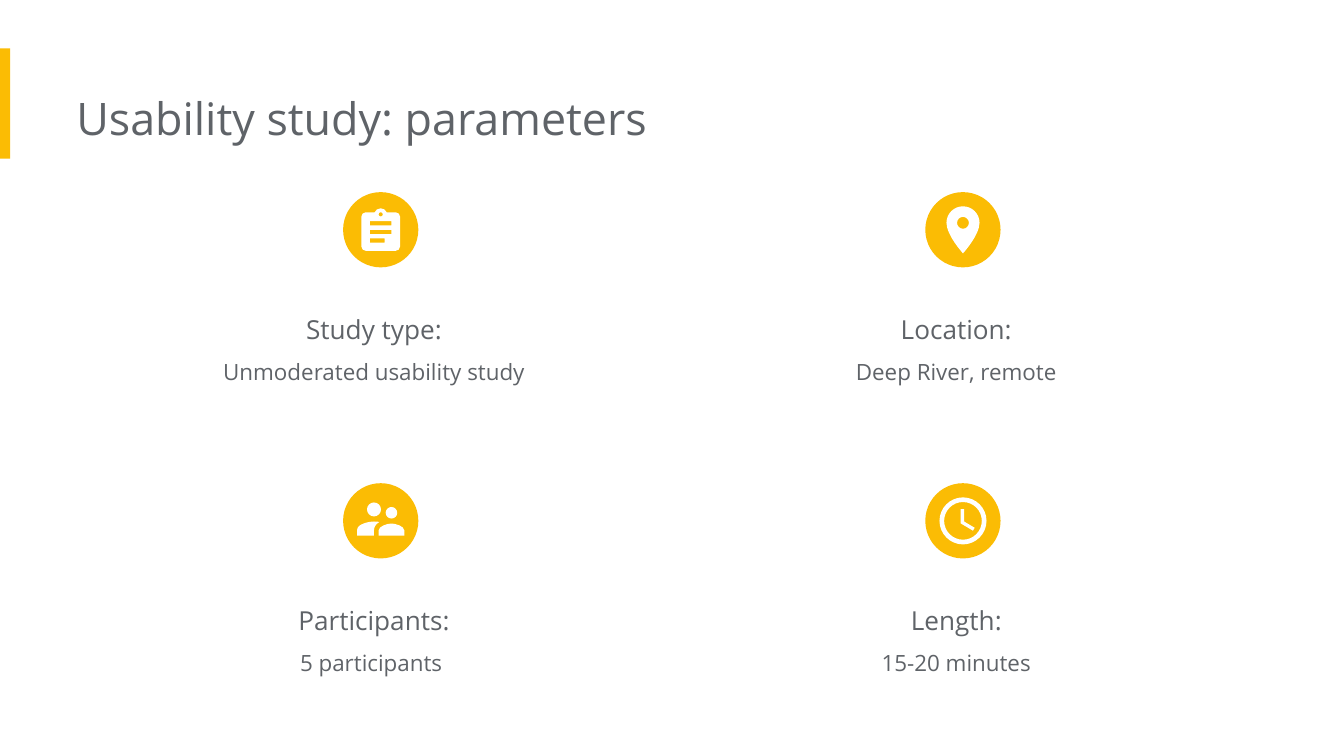
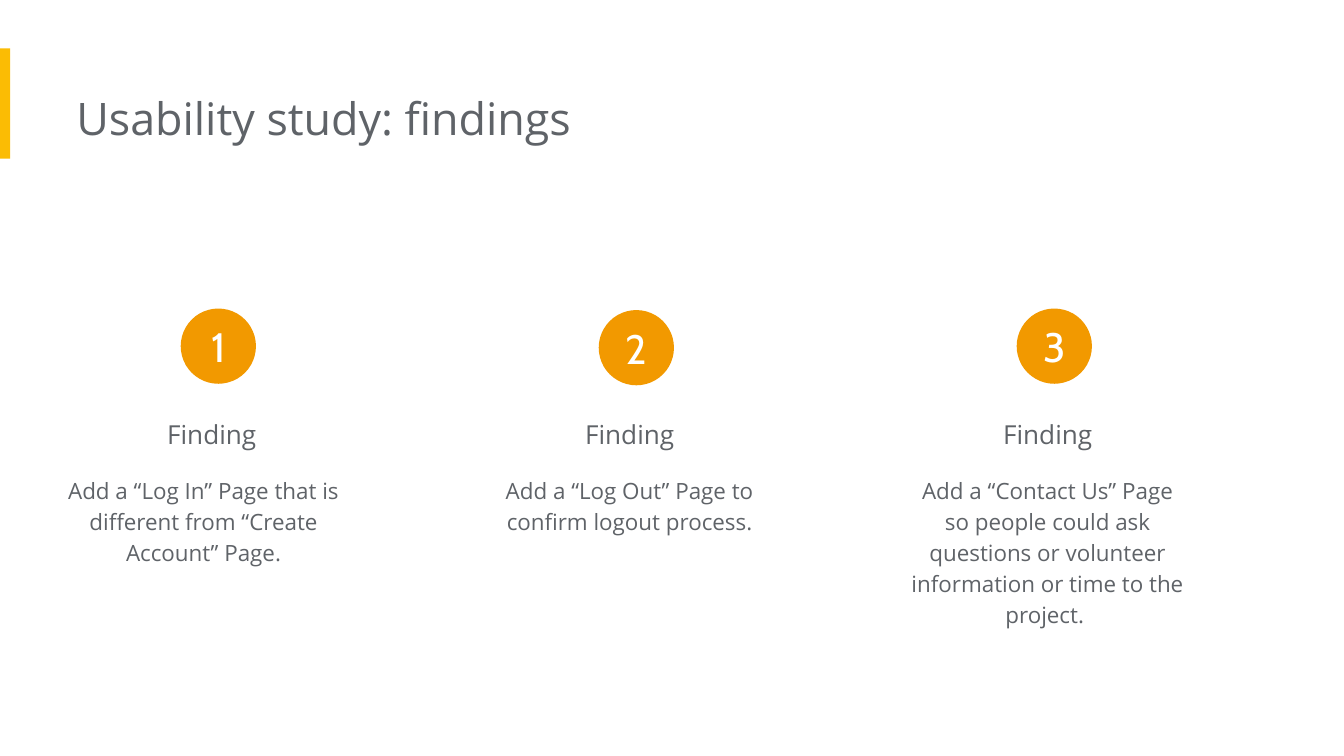
from dataclasses import dataclass

from pptx import Presentation
from pptx.dml.color import RGBColor
from pptx.enum.shapes import MSO_SHAPE
from pptx.enum.text import MSO_ANCHOR, MSO_AUTO_SIZE, PP_ALIGN
from pptx.oxml.ns import qn
from pptx.util import Inches, Pt


@dataclass(frozen=True)
class Theme:
    """Colours, fonts, type sizes and slide size of the deck."""
    accent: RGBColor = RGBColor(0xFB, 0xBC, 0x04)
    marker: RGBColor = RGBColor(0xF2, 0x99, 0x00)
    ink: RGBColor = RGBColor(0x5F, 0x63, 0x68)
    white: RGBColor = RGBColor(0xFF, 0xFF, 0xFF)
    font: str = "Open Sans"
    number_font: str = "Cabin"
    title: int = 24
    number: int = 22
    heading: int = 14
    body: int = 12
    width: int = Inches(10)
    height: int = Inches(5.625)


THEME = Theme()
BADGE = 5.6
ICON_UNIT = Inches(0.01)

PARAMETERS = [
    ("clipboard", "Study type:", "Unmoderated usability study"),
    ("pin", "Location:", "Deep River, remote"),
    ("people", "Participants:", "5 participants "),
    ("clock", "Length:", "15-20 minutes"),
]
FINDINGS = [
    ("Add a “Log In” Page that is different from “Create Account” Page.", -0.6, 0),
    ("Add a “Log Out” Page to confirm logout process.", 0, 0.2),
    ("Add a “Contact Us” Page so people could ask questions or volunteer "
     "information or time to the project. ", 0, 0),
]


def across(percent):
    """Turn a percentage of the slide width into a length."""
    return round(THEME.width * percent / 100)


def down(percent):
    """Turn a percentage of the slide height into a length."""
    return round(THEME.height * percent / 100)


def lines(*points):
    """List straight segments, each holding its end point."""
    return [(point,) for point in points]


def ring(cx, cy, r):
    """List the four Bézier segments of a circle after its start point."""
    k = 0.55 * r
    return lines((cx, cy - r)) + [
        ((cx + k, cy - r), (cx + r, cy - k), (cx + r, cy)),
        ((cx + r, cy + k), (cx + k, cy + r), (cx, cy + r)),
        ((cx - k, cy + r), (cx - r, cy + k), (cx - r, cy)),
        ((cx - r, cy - k), (cx - k, cy - r), (cx, cy - r)),
    ]


def bar(left, top, right, bottom):
    """List the segments of a rectangle."""
    return lines((left, top), (right, top), (right, bottom), (left, bottom))


ICONS = {
    "clipboard": [
        [
            *lines((11.2, -13), (4.5, -13)),
            ((3.8, -14.8), (2.1, -16), (0, -16)),
            ((-2.1, -16), (-3.8, -14.8), (-4.5, -13)),
            *lines((-11.2, -13)),
            ((-12.9, -13), (-14.4, -11.6), (-14.4, -9.8)),
            *lines((-14.4, 12.4)),
            ((-14.4, 14.2), (-12.9, 15.6), (-11.2, 15.6)),
            *lines((11.2, 15.6)),
            ((12.9, 15.6), (14.4, 14.2), (14.4, 12.4)),
            *lines((14.4, -9.8)),
            ((14.4, -11.6), (12.9, -13), (11.2, -13)),
        ],
        ring(0, -11.5, 1.6),
        bar(-8, 6.3, 3, 9.5), bar(-8, 0, 8, 3.2), bar(-8, -6.5, 8, -3.3),
    ],
    "pin": [
        [
            *lines((0, -17.5)),
            ((-6.8, -17.5), (-12.3, -12), (-12.3, -5.2)),
            ((-12.3, 4), (0, 17.5), (0, 17.5)),
            ((0, 17.5), (12.3, 4), (12.3, -5.2)),
            ((12.3, -12), (6.8, -17.5), (0, -17.5)),
        ],
        ring(0, -5.2, 4.4),
    ],
    "people": [
        ring(8, -6, 4.3),
        ring(-5, -8.5, 5.2),
        [
            *lines((8, 2)),
            ((5, 2), (-1.5, 4), (-1.5, 7)),
            *lines((-1.5, 11), (17.5, 11), (17.5, 7)),
            ((17.5, 4), (11, 2), (8, 2)),
        ],
        [
            *lines((-5, 0.5)),
            ((-9, 0.5), (-17.5, 2.5), (-17.5, 6.5)),
            *lines((-17.5, 11), (-5, 11), (-5, 7)),
            ((-5, 5.5), (-4.4, 2.8), (-1, 0.8)),
            ((-2.4, 0.6), (-3.8, 0.5), (-5, 0.5)),
        ],
    ],
    "clock": [
        ring(0, 0, 17.5),
        ring(0, 0, 14),
        lines((-1.8, -8.7), (-1.8, 1.8), (7.4, 7.3), (8.7, 5.1), (0.9, 0.5),
              (0.9, -8.7)),
    ],
}


def paint(shape, colour):
    """Give a shape a flat fill without line or shadow."""
    shape.shadow.inherit = False
    shape.fill.solid()
    shape.fill.fore_color.rgb = colour
    shape.line.fill.background()


def style(paragraph, size, colour, font, align=PP_ALIGN.CENTER, spacing=None):
    """Set the type and layout of a paragraph."""
    paragraph.alignment = align
    if spacing:
        paragraph.line_spacing = spacing
    paragraph.font.size = Pt(size)
    paragraph.font.name = font
    paragraph.font.color.rgb = colour


def add_text(slide, left, top, width, height, rows, spacing=None,
             align=PP_ALIGN.CENTER):
    """Add a text box of (text, size) rows, placed in slide percentages."""
    frame = slide.shapes.add_textbox(
        across(left), down(top), across(width), down(height)).text_frame
    frame.word_wrap = True
    frame.auto_size = MSO_AUTO_SIZE.SHAPE_TO_FIT_TEXT
    frame.margin_left = 0
    frame.margin_top = frame.margin_right = frame.margin_bottom = Inches(0.1)
    for index, (text, size) in enumerate(rows):
        paragraph = frame.add_paragraph() if index else frame.paragraphs[0]
        paragraph.text = text
        style(paragraph, size, THEME.ink, THEME.font, align, spacing)


def add_badge(slide, centre, middle, colour, number=None):
    """Add a round badge, with a number if one is given."""
    size = across(BADGE)
    badge = slide.shapes.add_shape(
        MSO_SHAPE.OVAL, across(centre) - size // 2, down(middle) - size // 2, size, size)
    paint(badge, colour)
    if number is not None:
        frame = badge.text_frame
        frame.margin_left = frame.margin_right = 0
        frame.margin_top = frame.margin_bottom = 0
        frame.vertical_anchor = MSO_ANCHOR.MIDDLE
        frame.text = str(number)
        style(frame.paragraphs[0], THEME.number, THEME.white, THEME.number_font)


def bend(shape, segments):
    """Merge the three line steps of each Bézier segment into one curve."""
    steps = iter(list(shape._element.iter(qn("a:lnTo"))))
    for segment in segments:
        first, *others = [next(steps) for _ in segment]
        if others:
            first.tag = qn("a:cubicBezTo")
        for step in others:
            first.append(step[0])
            step.getparent().remove(step)


def add_icon(slide, centre, middle, contours):
    """Add a white icon whose inner contours are holes."""
    outline = None
    for contour in contours:
        start, *points = [(round(x * ICON_UNIT), round(y * ICON_UNIT))
                          for segment in contour for x, y in segment]
        if outline is None:
            outline = slide.shapes.build_freeform(*start)
        else:
            outline.move_to(*start)
        outline.add_line_segments(points, close=True)
    icon = outline.convert_to_shape(across(centre), down(middle))
    bend(icon, [segment for contour in contours for segment in contour[1:]])
    paint(icon, THEME.white)


def add_titled_slide(deck, title):
    """Add a blank slide with the accent band and a title."""
    slide = deck.slides.add_slide(deck.slide_layouts[6])
    band = slide.shapes.add_shape(
        MSO_SHAPE.RECTANGLE, 0, down(6.4), across(0.76), down(14.6))
    paint(band, THEME.accent)
    add_text(slide, 5.68, 10.2, 67.3, 10.8, [(title, THEME.title)],
             align=PP_ALIGN.LEFT)
    return slide


def add_parameters(deck):
    """Build the two-by-two grid of study parameters."""
    slide = add_titled_slide(deck, "Usability study: parameters")
    width = 37.7
    for index, (icon, label, value) in enumerate(PARAMETERS):
        row, column = divmod(index, 2)
        centre = 28.33 + 43.32 * column
        middle = 30.4 + 38.5 * row
        add_text(slide, centre - width / 2, middle + 7.2, width, 13.5,
                 [(label, THEME.heading), (value, THEME.body)], 1.5)
        add_badge(slide, centre, middle, THEME.accent)
        add_icon(slide, centre, middle, ICONS[icon])


def add_findings(deck):
    """Build the row of numbered findings."""
    slide = add_titled_slide(deck, "Usability study: findings")
    heading_width, body_width = 20.5, 21.7
    for index, (finding, shift, drop) in enumerate(FINDINGS):
        centre = 16.25 + 31.1 * index
        add_badge(slide, centre, 45.8 + drop, THEME.marker, index + 1)
        add_text(slide, centre - heading_width / 2, 51.5, heading_width, 7.8,
                 [("Finding", THEME.heading)], 1.5)
        add_text(slide, centre + shift - body_width / 2, 60.8, body_width, 15.5,
                 [(finding, THEME.body)], 1.15)


def main():
    """Build and save the deck."""
    deck = Presentation()
    deck.slide_width, deck.slide_height = THEME.width, THEME.height
    add_parameters(deck)
    add_findings(deck)
    deck.save("out.pptx")


if __name__ == "__main__":
    main()
